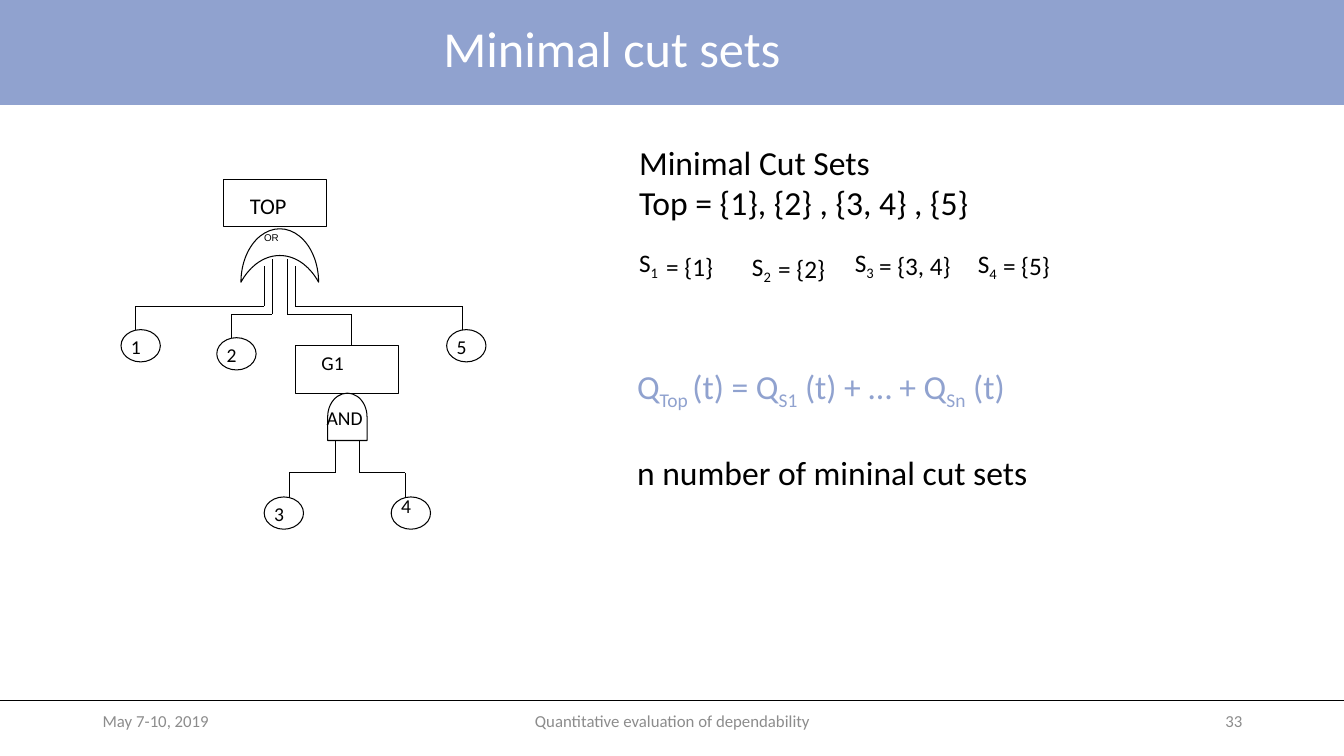
from lxml import etree
from pptx import Presentation
from pptx.dml.color import RGBColor
from pptx.enum.shapes import MSO_CONNECTOR, MSO_SHAPE
from pptx.enum.text import MSO_ANCHOR, PP_ALIGN
from pptx.oxml.ns import qn
from pptx.util import Inches, Pt

BLUE = RGBColor(0x90, 0xA2, 0xCF)
BLACK = RGBColor(0, 0, 0)
WHITE = RGBColor(0xFF, 0xFF, 0xFF)
GRAY = RGBColor(0x8C, 0x8C, 0x8C)
RECT, OVAL = MSO_SHAPE.RECTANGLE, MSO_SHAPE.OVAL
MOON, DELAY = MSO_SHAPE.MOON, MSO_SHAPE.FLOWCHART_DELAY
STRAIGHT = MSO_CONNECTOR.STRAIGHT
LEFT, CENTER, RIGHT = PP_ALIGN.LEFT, PP_ALIGN.CENTER, PP_ALIGN.RIGHT
TOP, MIDDLE = MSO_ANCHOR.TOP, MSO_ANCHOR.MIDDLE
EVENT_W, EVENT_H = 0.39, 0.32

EVENTS = [("1", 1.2, 3.27, 0), ("2", 2.15, 3.35, 0), ("5", 4.43, 3.27, 0),
          ("3", 2.62, 4.93, 0), ("4", 3.88, 4.93, -0.08)]
GATES = [(RECT, (2.22, 1.78, 1.02, 0.47), 0), (RECT, (2.93, 3.43, 1.02, 0.47), 0),
         (DELAY, (3.21, 3.94, 0.47, 0.39), 270), (MOON, (2.51, 2.15, 0.53, 0.77), 90)]
BRANCHES = [(2.62, 2.64, 3.04, 1.34, 3.27), (2.7, 2.57, 3.12, 2.3, 3.35),
            (2.85, 2.57, 3.12, 3.49, 3.43), (2.93, 2.64, 3.04, 4.59, 3.27),
            (3.33, 4.38, 4.69, 2.87, 4.93), (3.57, 4.38, 4.69, 4.02, 4.93)]
CUT_SETS = [("1", "= {1}", 6.24, 2.4, 6.51, 2.44, 0.67),
            ("2", "= {2}", 7.36, 2.44, 7.62, 2.46, 0.67),
            ("3", "= {3, 4}", 8.38, 2.4, 8.62, 2.43, 0.92),
            ("4", "= {5}", 9.6, 2.41, 9.85, 2.43, 0.67)]
FORMULA = [("Q", False), ("Top ", True), ("(t) = Q", False), ("S1", True),
           (" (t) + … + Q", False), ("Sn", True), (" (t)", False)]


def set_font(font, size, color=BLACK, name="Calibri"):
    """Format a font from a dict of values."""
    for key, value in {"size": Pt(size), "name": name}.items():
        setattr(font, key, value)
    font.color.rgb = color


def add_runs(p, runs, size, color=BLACK, name="Calibri"):
    """Fill a paragraph with (text, is_subscript) runs."""
    for text, subscript in runs:
        r = p.add_run()
        r.text = text
        set_font(r.font, size, color, name)
        if subscript:
            r._r.get_or_add_rPr().set("baseline", "-25000")


def add_text(s, box, runs, size, color=BLACK, name="Calibri", align=LEFT,
             anchor=TOP, wrap=True):
    """Add a text box with one paragraph and return its text frame."""
    tf = s.shapes.add_textbox(*map(Inches, box)).text_frame
    for key, value in {"word_wrap": wrap, "vertical_anchor": anchor}.items():
        setattr(tf, key, value)
    p = tf.paragraphs[0]
    p.alignment = align
    add_runs(p, [(runs, False)] if isinstance(runs, str) else runs, size, color, name)
    return tf


def add_outline(s, kind, box, rotation=0):
    """Add an unfilled shape with a thin black outline."""
    sp = s.shapes.add_shape(kind, *map(Inches, box))
    sp.shadow.inherit = False
    sp.rotation = rotation
    sp.fill.background()
    sp.line.color.rgb = BLACK
    sp.line.width = Pt(0.75)


def add_line(s, x1, y1, x2, y2, width=0.75):
    """Add a straight black line."""
    line = s.shapes.add_connector(STRAIGHT, *map(Inches, (x1, y1, x2, y2)))
    line.line.color.rgb = BLACK
    line.line.width = Pt(width)
    etree.SubElement(line._element.spPr, qn("a:effectLst"))


def add_header(s):
    """Place the title on a coloured band."""
    title = s.shapes.title
    band = s.shapes.add_shape(RECT, *map(Inches, (0, 0, 13.33, 1.04)))
    band.shadow.inherit = False
    band.fill.solid()
    band.fill.fore_color.rgb = BLUE
    band.line.fill.background()
    title.element.addprevious(band.element)
    for key, value in {"left": 0, "top": 0, "width": 12.14, "height": 1.02}.items():
        setattr(title, key, Inches(value))
    title.text_frame.vertical_anchor = MIDDLE
    p = title.text_frame.paragraphs[0]
    p.alignment = CENTER
    p.line_spacing = 0.9
    add_runs(p, [("Minimal cut sets", False)], 36, WHITE)


def add_footer(s):
    """Add the rule, date, footer and slide number."""
    add_line(s, 0, 6.95, 13.33, 6.95, 0.5)
    for text, left, width, align in [
            ("May 7-10, 2019", 0.92, 3, LEFT),
            ("Quantitative evaluation of dependability", 4.42, 4.5, CENTER),
            ("33", 9.42, 3, RIGHT)]:
        add_text(s, (left, 6.95, width, 0.4), text, 12, GRAY, align=align, anchor=MIDDLE)


def add_fault_tree(s):
    """Draw the gates, events and branches of the fault tree."""
    for kind, box, rotation in GATES:
        add_outline(s, kind, box, rotation)
    for stem_x, stem_y, bar_y, end_x, end_y in BRANCHES:
        add_line(s, stem_x, stem_y, stem_x, bar_y)
        add_line(s, stem_x, bar_y, end_x, bar_y)
        add_line(s, end_x, bar_y, end_x, end_y)
    for label, x, y, shift in EVENTS:
        add_outline(s, OVAL, (x, y, EVENT_W, EVENT_H))
        add_text(s, (x, y + shift, EVENT_W, 0.33), label, 14)
    add_text(s, (2.38, 1.86, 0.57, 0.37), "TOP", 16, wrap=False)
    add_text(s, (3.09, 3.43, 0.72, 0.33), "G1", 14)
    add_text(s, (3.14, 3.98, 0.72, 0.33), "AND", 14)
    add_text(s, (2.52, 2.25, 0.49, 0.3), "OR", 7, name="Arial")


def add_cut_sets(s):
    """Write the minimal cut sets and the formula."""
    tf = add_text(s, (6.24, 1.36, 3.57, 0.91), "Minimal Cut Sets", 24)
    add_runs(tf.add_paragraph(), [("Top = {1}, {2} , {3, 4} , {5}", False)], 24)
    for index, members, x, y, members_x, members_y, width in CUT_SETS:
        add_text(s, (x, y, 0.4, 0.4), [("S", False), (index, True)], 18, wrap=False)
        add_text(s, (members_x, members_y, width, 0.4), members, 18, wrap=False)
    tf = add_text(s, (6.22, 3.58, 5.91, 1.62), FORMULA, 24, BLUE)
    p = tf.add_paragraph()
    p.space_before = Pt(29)
    add_runs(p, [("n number of mininal cut sets", False)], 24)


def main():
    """Build and save the slide."""
    prs = Presentation()
    prs.slide_width, prs.slide_height = Inches(13.33), Inches(7.5)
    s = prs.slides.add_slide(prs.slide_layouts[5])
    add_header(s)
    add_footer(s)
    add_fault_tree(s)
    add_cut_sets(s)
    prs.save("out.pptx")


if __name__ == "__main__":
    main()
